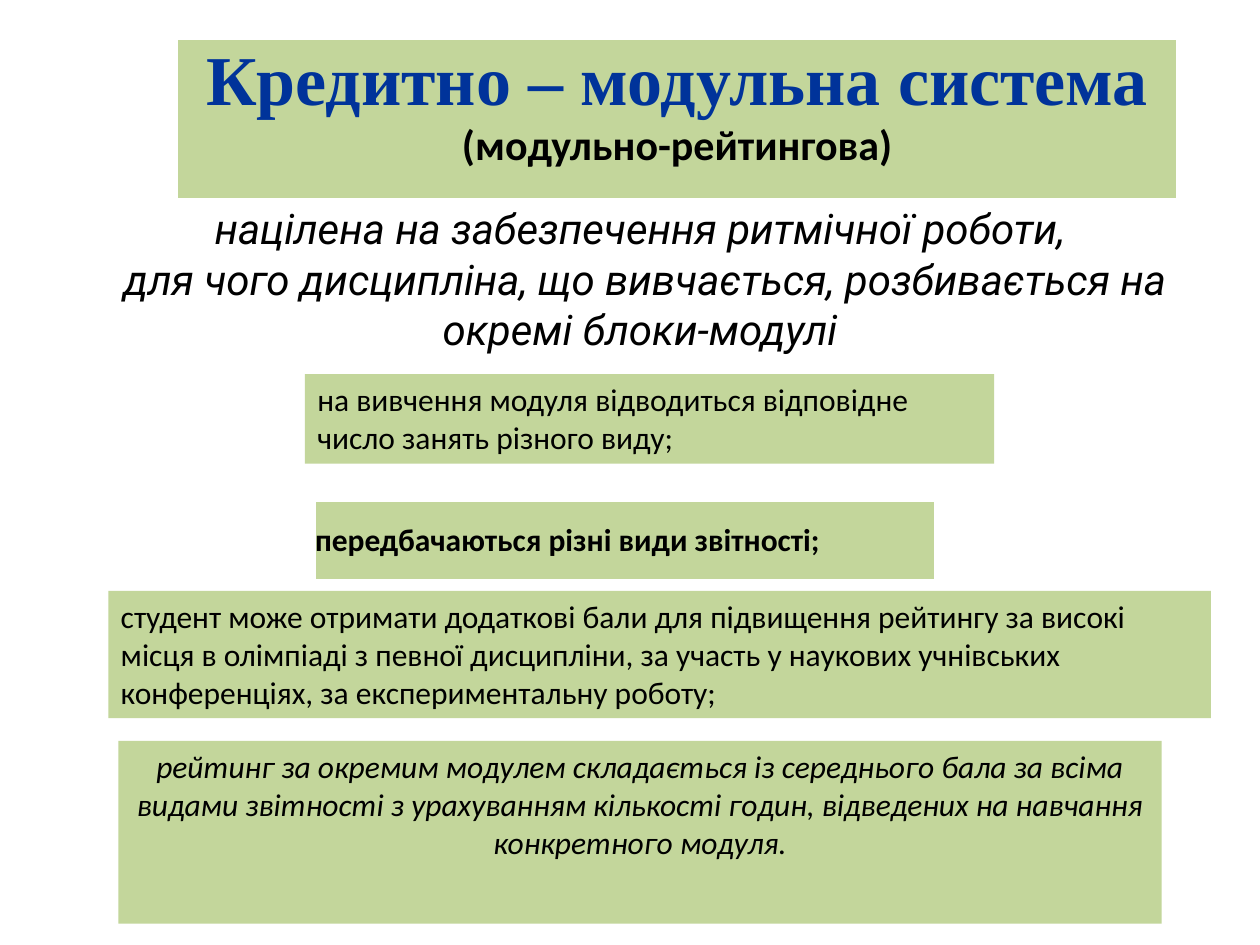
from dataclasses import dataclass

from pptx import Presentation
from pptx.dml.color import RGBColor
from pptx.enum.shapes import MSO_SHAPE
from pptx.enum.text import MSO_ANCHOR, PP_ALIGN
from pptx.util import Inches, Pt

LEFT, CENTER, JUSTIFY = PP_ALIGN.LEFT, PP_ALIGN.CENTER, PP_ALIGN.JUSTIFY
TOP, MIDDLE = MSO_ANCHOR.TOP, MSO_ANCHOR.MIDDLE
RECTANGLE = MSO_SHAPE.RECTANGLE
GREEN = RGBColor(0xC3, 0xD6, 0x9B)
BLUE = RGBColor(0x00, 0x33, 0x9A)
BLACK = RGBColor(0x00, 0x00, 0x00)
COLS, ROWS = 100, 75
BLANK_LAYOUT = 6


@dataclass(frozen=True)
class Line:
    text: str
    size: int = 18
    font: str = "Calibri"
    color: RGBColor = BLACK
    bold: bool = False
    italic: bool = False


@dataclass(frozen=True)
class Block:
    col: float
    row: float
    cols: float
    rows: float
    lines: tuple[Line, ...] = ()
    align: PP_ALIGN = LEFT
    pad_bottom: float = 0
    hanging: float = 0


TABLES = (
    Block(14.1, 3.1, 79.3, 12.7, (
        Line("Кредитно – модульна система", 40, "Times New Roman", BLUE, bold=True),
        Line("(модульно-рейтингова)", 24, bold=True),
    ), CENTER, pad_bottom=1.8),
    Block(16.7, 36.3, 66.7, 2.3),
    Block(16.7, 36.9, 66.7, 1.2),
    Block(25, 39.8, 49.2, 6.2, (
        Line("передбачаються різні види звітності; ", bold=True),
    ), JUSTIFY, hanging=2.5),
)

PURPOSE = Block(4.7, 15.6, 92.2, 13.1, (
    Line("націлена на забезпечення ритмічної роботи,", 24, "Roboto", italic=True),
    Line(" для чого дисципліна, що вивчається, розбивається на окремі блоки-модулі",
         24, "Roboto", italic=True),
), CENTER)

PANELS = (
    Block(24.2, 29.7, 54.7, 7.1, (
        Line("на вивчення модуля відводиться відповідне число занять різного виду;"),
    )),
    Block(8.6, 46.9, 87.5, 10.1, (
        Line("студент може отримати додаткові бали для підвищення рейтингу за високі "
             "місця в олімпіаді з певної дисципліни, за участь у наукових учнівських "
             "конференціях, за експериментальну роботу;"),
    )),
    Block(9.4, 58.8, 82.8, 14.5, (
        Line("рейтинг за окремим модулем складається із середнього бала за всіма "
             "видами звітності з урахуванням кількості годин, відведених на навчання "
             "конкретного модуля.", italic=True),
    ), CENTER),
)


def write(prs, tf, block: Block) -> None:
    tf.word_wrap = True
    tf.text = "\n".join(line.text for line in block.lines)
    for p, line in zip(tf.paragraphs, block.lines):
        p.alignment = block.align
        if block.hanging:
            indent = int(block.hanging * prs.slide_width / COLS)
            pPr = p._p.get_or_add_pPr()
            pPr.set("marL", str(indent))
            pPr.set("indent", str(-indent))
        font = p.runs[0].font
        font.name, font.size = line.font, Pt(line.size)
        font.bold, font.italic = line.bold, line.italic
        font.color.rgb = line.color


def place(prs, block: Block) -> tuple[int, int, int, int]:
    col, row = prs.slide_width / COLS, prs.slide_height / ROWS
    return (round(block.col * col), round(block.row * row),
            round(block.cols * col), round(block.rows * row))


def draw_table(prs, s, block: Block) -> None:
    table = s.shapes.add_table(1, 1, *place(prs, block)).table
    table.first_row = table.horz_banding = False
    cell = table.cell(0, 0)
    if block.lines:
        cell.fill.solid()
        cell.fill.fore_color.rgb = GREEN
    else:
        cell.fill.background()
    cell.vertical_anchor = MIDDLE
    cell.margin_left = cell.margin_right = cell.margin_top = 0
    cell.margin_bottom = round(block.pad_bottom * prs.slide_height / ROWS)
    write(prs, cell.text_frame, block)


def draw_text(prs, s, block: Block) -> None:
    write(prs, s.shapes.add_textbox(*place(prs, block)).text_frame, block)


def draw_panel(prs, s, block: Block) -> None:
    sp = s.shapes.add_shape(RECTANGLE, *place(prs, block))
    sp.shadow.inherit = False
    sp.fill.solid()
    sp.fill.fore_color.rgb = GREEN
    sp.line.fill.background()
    sp.text_frame.vertical_anchor = TOP
    write(prs, sp.text_frame, block)


def main() -> None:
    prs = Presentation()
    prs.slide_width, prs.slide_height = Inches(10), Inches(7.5)
    s = prs.slides.add_slide(prs.slide_layouts[BLANK_LAYOUT])
    for block in TABLES:
        draw_table(prs, s, block)
    draw_text(prs, s, PURPOSE)
    for block in PANELS:
        draw_panel(prs, s, block)
    prs.save("out.pptx")


if __name__ == "__main__":
    main()
